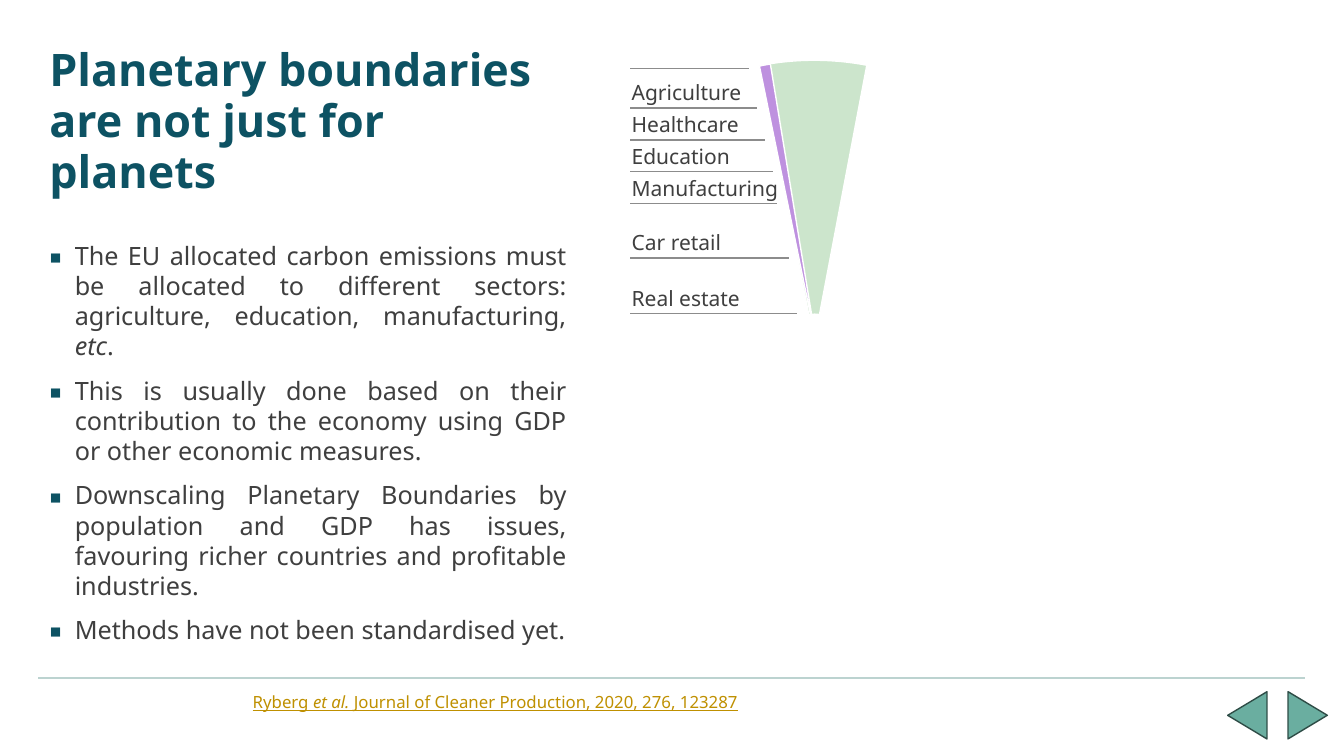
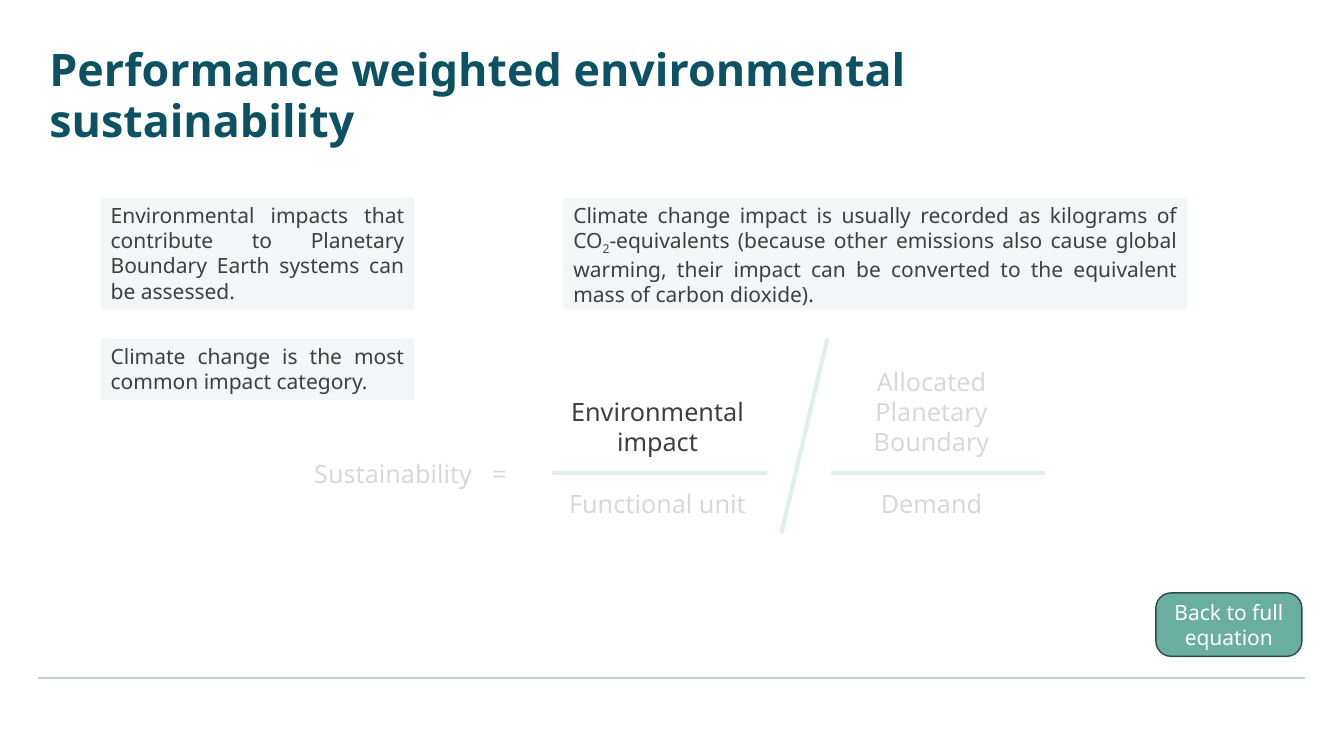
from lxml import etree
from pptx import Presentation
from pptx.dml.color import RGBColor
from pptx.enum.shapes import MSO_CONNECTOR as Connector, MSO_SHAPE as Shape
from pptx.enum.text import MSO_ANCHOR as Anchor, MSO_AUTO_SIZE as AutoSize, PP_ALIGN as Align
from pptx.oxml.ns import qn
from pptx.util import Cm, Pt

FONT = "Noto Sans"
WHITE = RGBColor(0xFF, 0xFF, 0xFF)
PETROL = RGBColor(0x0D, 0x52, 0x63)
TEXT = RGBColor(0x3F, 0x3F, 0x3F)
TEAL = RGBColor(0x6A, 0xAE, 0xA0)
DARK_TEAL = RGBColor(0x2E, 0x4C, 0x46)
RULE = RGBColor(0xBC, 0xD3, 0xD0)
GREY = RGBColor(0x8C, 0x8C, 0x8C)
GOLD = RGBColor(0xBF, 0x90, 0x00)
GREEN = RGBColor(0x00, 0x80, 0x00)
PURPLE = RGBColor(0xBE, 0x91, 0xDF)
PALE = RGBColor(0xF2, 0xF6, 0xF6)

# A run is (text, style), where style is "", "italic" or "subscript".
BULLETS = [
    [("The EU allocated carbon emissions must be allocated to different sectors: "
      "agriculture, education, manufacturing, ", ""), ("etc", "italic"), (".", "")],
    [("This is usually done based on their contribution to the economy using GDP "
      "or other economic measures.", "")],
    [("Downscaling Planetary Boundaries by population and GDP has issues, "
      "favouring richer countries and profitable industries.", "")],
    [("Methods have not been standardised yet.", "")],
]
CITATION = [("Ryberg ", ""), ("et al. ", "italic"),
            ("Journal of Cleaner Production, 2020, 276, 123287", "")]

# Sector name above its line, line height, line end (cm)
SECTORS = [
    ("", 1.73, 18.87),
    ("Agriculture", 2.72, 19.08),
    ("Healthcare", 3.53, 19.28),
    ("Education", 4.32, 19.48),
    ("Manufacturing", 5.13, 19.58),
    ("Car retail", 6.5, 19.89),
    ("Real estate", 7.9, 20.09),
]
SECTOR_LEFT, LABEL_LEFT, LABEL_HEIGHT = 15.88, 15.67, 0.84

# Left (cm), start and end angle (degrees), colour, opacity (%)
WEDGES = [(13.41, 258.95, 280.75, GREEN, 20), (13.46, 258.39, 260.65, PURPLE, 100)]
# Left (cm), rotation
ARROWS = [(32.36, 90), (30.84, 270)]

# Numerator, denominator, text left, text width, bar left (cm)
FRACTIONS = [
    ("Environmental impact", "Functional unit", 14.07, 5, 13.92),
    ("Allocated Planetary Boundary", "Demand", 21.28, 4.39, 20.93),
]
BAR_Y, BAR_WIDTH = 11.91, 5.41
LEFT_SIDE = [("Sustainability", 7.67, 4.6), ("=", 12.15, 1.2)]
VEILS = [(19.51, 8.36, 7.65, 5.31), (6.07, 8.38, 7.65, 5.31), (13.39, 11.63, 6.07, 2.46)]
NOTES = [
    ((2.54, 4.98, 7.9, 2.82),
     [("Environmental impacts that contribute to Planetary Boundary Earth systems "
       "can be assessed.", "")]),
    ((2.54, 8.53, 7.9, 1.55),
     [("Climate change is the most common impact category.", "")]),
    ((14.2, 4.98, 15.72, 2.82),
     [("Climate change impact is usually recorded as kilograms of CO", ""),
      ("2", "subscript"),
      ("-equivalents (because other emissions also cause global warming, their impact "
       "can be converted to the equivalent mass of carbon dioxide).", "")]),
]


def lengths(box):
    return [Cm(value) for value in box]


def add_runs(paragraph, runs, size, color=TEXT, align=Align.LEFT, bold=False, underline=False):
    paragraph.alignment = align
    for text, style in runs:
        run = paragraph.add_run()
        run.text = text
        font = run.font
        font.name, font.size, font.bold = FONT, Pt(size), bold
        font.color.rgb = color
        font.italic = style == "italic"
        font.underline = underline
        if style == "subscript":
            run._r.get_or_add_rPr().set("baseline", "-25000")


def add_text(slide, box, runs, size, anchor=Anchor.TOP, **style):
    frame = slide.shapes.add_textbox(*lengths(box)).text_frame
    frame.word_wrap = True
    frame.vertical_anchor = anchor
    add_runs(frame.paragraphs[0], runs, size, **style)


def add_block(slide, kind, box, fill, line=None, opacity=100):
    shape = slide.shapes.add_shape(kind, *lengths(box))
    shape.shadow.inherit = False
    shape.fill.solid()
    shape.fill.fore_color.rgb = fill
    if opacity < 100:
        color = shape.element.spPr.find(qn("a:solidFill")).find(qn("a:srgbClr"))
        etree.SubElement(color, qn("a:alpha"), val=str(opacity * 1000))
    if line is None:
        shape.line.fill.background()
    else:
        shape.line.color.rgb = line
        shape.line.width = Pt(1)
    return shape


def add_line(slide, start, end, color, width):
    line = slide.shapes.add_connector(Connector.STRAIGHT, *lengths(start + end))
    line.line.color.rgb = color
    line.line.width = Pt(width)
    etree.SubElement(line.element.spPr, qn("a:effectLst"))


def place(placeholder, box):
    """Move a placeholder and return its text frame, anchored at the top."""
    placeholder.left, placeholder.top, placeholder.width, placeholder.height = lengths(box)
    frame = placeholder.text_frame
    frame.word_wrap = True
    frame.auto_size = AutoSize.NONE
    frame.vertical_anchor = Anchor.TOP
    return frame


def add_bullet(paragraph):
    properties = paragraph._p.get_or_add_pPr()
    properties.set("marL", str(Cm(0.64)))
    properties.set("indent", str(-Cm(0.64)))
    color = etree.SubElement(properties, qn("a:buClr"))
    etree.SubElement(color, qn("a:srgbClr"), val=str(PETROL))
    etree.SubElement(properties, qn("a:buSzPct"), val="125000")
    etree.SubElement(properties, qn("a:buFont"), typeface=FONT)
    etree.SubElement(properties, qn("a:buChar"), char="▪")


def new_slide(presentation, layout, title, title_width):
    """Add a slide with the shared title style and footer rule."""
    slide = presentation.slides.add_slide(presentation.slide_layouts[layout])
    add_line(slide, (0.97, 17.09), (32.89, 17.09), RULE, 1.1)
    paragraph = place(slide.shapes.title, (0.99, 1.02, title_width, 2.97)).paragraphs[0]
    paragraph.line_spacing = 0.95
    add_runs(paragraph, [(title, "")], 32, color=PETROL, bold=True)
    return slide


def build_sectors(presentation):
    slide = new_slide(presentation, 1, "Planetary boundaries are not just for planets", 12.95)
    frame = place(slide.placeholders[1], (0.99, 5.92, 13.54, 10.8))
    for index, runs in enumerate(BULLETS):
        paragraph = frame.add_paragraph() if index else frame.paragraphs[0]
        add_bullet(paragraph)
        paragraph.space_before = Pt(10 if index else 0)
        add_runs(paragraph, runs, 18, align=Align.JUSTIFY)

    for left, rotation in ARROWS:
        box = (left, 17.53, 1.19, 0.99)
        add_block(slide, Shape.ISOSCELES_TRIANGLE, box, TEAL, DARK_TEAL).rotation = rotation

    for left, start, end, color, opacity in WEDGES:
        wedge = add_block(slide, Shape.PIE, (left, 1.52, 14.22, 14.22), color, WHITE, opacity)
        # One degree is 60000 angle units, and adjustments count in 100000
        wedge.adjustments[0], wedge.adjustments[1] = start * 0.6, end * 0.6
    add_block(slide, Shape.OVAL, (19.94, 7.9, 1.19, 1.19), WHITE)

    for name, y, line_end in SECTORS:
        add_line(slide, (SECTOR_LEFT, y), (line_end, y), GREY, 1)
        if name:
            add_text(slide, (LABEL_LEFT, y - LABEL_HEIGHT, 4.45, LABEL_HEIGHT), [(name, "")], 15)
    add_text(slide, (6.12, 17.3, 21.79, 1.02), CITATION, 12, color=GOLD, underline=True)


def build_equation(presentation):
    slide = new_slide(presentation, 5, "Performance weighted environmental sustainability", 26.92)
    for text, left, width in LEFT_SIDE:
        add_text(slide, (left, 11.43, width, 1.02), [(text, "")], 18)
    for numerator, denominator, left, width, bar_left in FRACTIONS:
        add_line(slide, (bar_left, BAR_Y), (bar_left + BAR_WIDTH, BAR_Y), TEAL, 3)
        add_text(slide, (left, 9.06, width, 2.57), [(numerator, "")], 18,
                 anchor=Anchor.BOTTOM, align=Align.CENTER)
        add_text(slide, (left, 12.17, width, 1.02), [(denominator, "")], 18, align=Align.CENTER)
    add_line(slide, (19.69, 13.44), (20.85, 8.53), TEAL, 3)

    for box in VEILS:
        add_block(slide, Shape.RECTANGLE, box, WHITE, opacity=80)
    for box, runs in NOTES:
        frame = add_block(slide, Shape.RECTANGLE, box, PALE).text_frame
        frame.word_wrap = True
        frame.vertical_anchor = Anchor.TOP
        add_runs(frame.paragraphs[0], runs, 15, align=Align.JUSTIFY)

    button = add_block(slide, Shape.ROUNDED_RECTANGLE, (29.13, 14.94, 3.68, 1.6), TEAL, DARK_TEAL)
    button.adjustments[0] = 0.24
    button.text_frame.word_wrap = True
    button.text_frame.vertical_anchor = Anchor.MIDDLE
    add_runs(button.text_frame.paragraphs[0], [("Back to full equation", "")], 15,
             color=WHITE, align=Align.CENTER)


def main():
    presentation = Presentation()
    presentation.slide_width, presentation.slide_height = Cm(33.87), Cm(19.05)
    build_sectors(presentation)
    build_equation(presentation)
    presentation.save("out.pptx")


if __name__ == "__main__":
    main()
